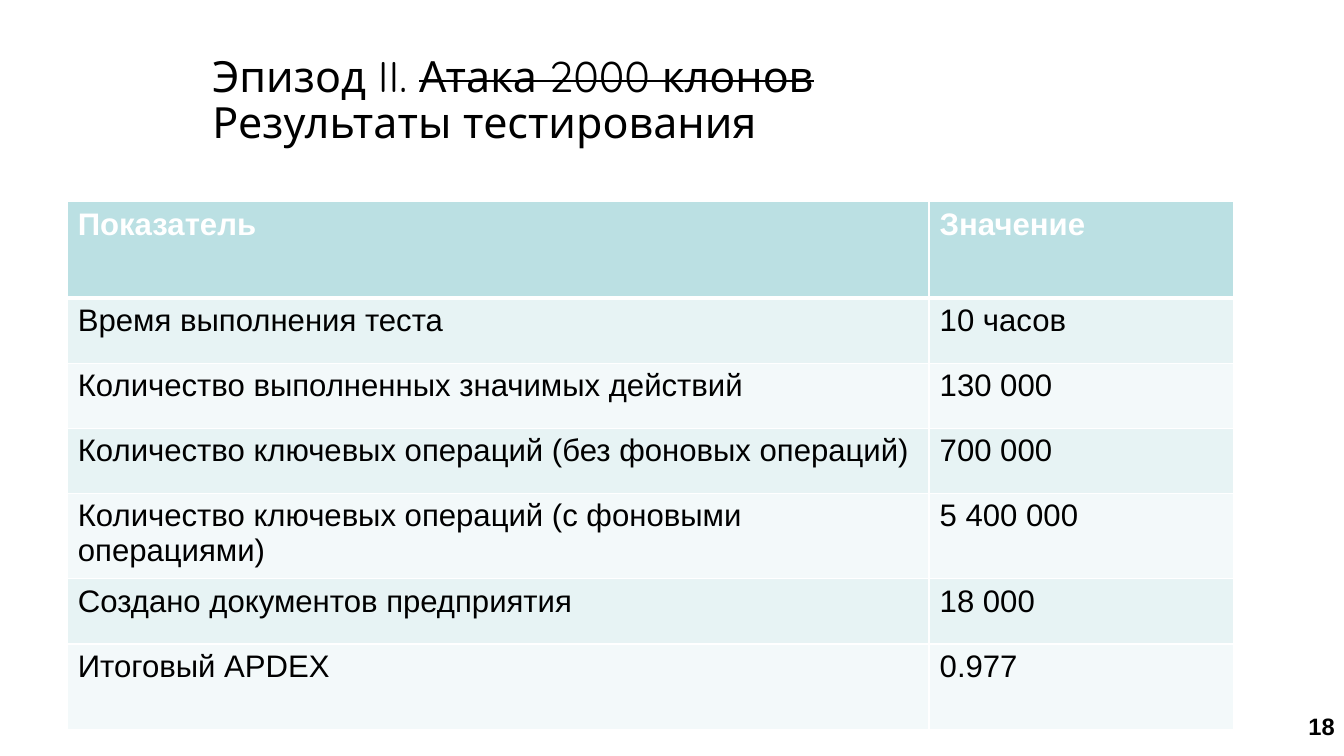
import pptx
import pptx.util
import pptx.dml.color
import pptx.enum.text
import pptx.oxml.ns
import lxml.etree

Cm = pptx.util.Cm
Pt = pptx.util.Pt
ALIGN = pptx.enum.text.PP_ALIGN
ANCHOR = pptx.enum.text.MSO_ANCHOR
AUTO_SIZE = pptx.enum.text.MSO_AUTO_SIZE

COLORS = {
    "text": "000000",
    "white": "FFFFFF",
    "header": "BBE0E3",
    "odd": "E7F3F4",
    "even": "F3F9FA",
}

RESULTS = [
    ("Показатель", "Значение"),
    ("Время выполнения теста", "10 часов"),
    ("Количество выполненных значимых действий", "130 000"),
    ("Количество ключевых операций (без фоновых операций)", "700 000"),
    ("Количество ключевых операций (с фоновыми операциями)", "5 400 000"),
    ("Создано документов предприятия", "18 000"),
    ("Итоговый APDEX", "0.977"),
]
COLUMN_WIDTHS = [20.52, 7.26]
ROW_HEIGHTS = [2.3, 1.55, 1.55, 1.55, 1.9, 1.55, 2.03]


def rgb(name):
    return pptx.dml.color.RGBColor.from_string(COLORS[name])


def apply(target, values):
    for name, value in values.items():
        setattr(target, name, value)


class SlideBuilder:
    title_font = {"name": "Quicksand", "size": Pt(29), "bold": False}
    cell_font = {"name": "Arial", "size": Pt(21), "bold": False}
    header_font = {"name": "Arial", "size": Pt(21), "bold": True}
    number_font = {"name": "Arial", "size": Pt(16), "bold": True}

    def __init__(self, slide):
        self.slide = slide

    def add_run(self, paragraph, text, font, color="text", strike=False):
        run = paragraph.add_run()
        run.text = text
        apply(run.font, font)
        run.font.color.rgb = rgb(color)
        if strike:
            run._r.get_or_add_rPr().set("strike", "sngStrike")

    def place_title(self, left, top, width, height, lines):
        title = self.slide.shapes.title
        apply(title, {"left": Cm(left), "top": Cm(top),
                      "width": Cm(width), "height": Cm(height)})
        apply(title.text_frame, {"word_wrap": True, "auto_size": AUTO_SIZE.NONE,
                                 "vertical_anchor": ANCHOR.MIDDLE})
        paragraph = title.text_frame.paragraphs[0]
        apply(paragraph, {"alignment": ALIGN.LEFT, "line_spacing": 0.9})
        for index, line in enumerate(lines):
            if index:
                paragraph.add_line_break()
            for text, strike in line:
                self.add_run(paragraph, text, self.title_font, strike=strike)

    def add_number(self, left, top, width, height, text):
        box = self.slide.shapes.add_textbox(Cm(left), Cm(top), Cm(width), Cm(height))
        box.text_frame.word_wrap = True
        paragraph = box.text_frame.paragraphs[0]
        apply(paragraph, {"alignment": ALIGN.RIGHT, "line_spacing": 1.1})
        self.add_run(paragraph, text, self.number_font)

    def add_borders(self, cell, widths):
        properties = cell._tc.get_or_add_tcPr()
        qn = pptx.oxml.ns.qn
        for side, width in widths.items():
            line = lxml.etree.SubElement(properties, qn("a:ln" + side), w=str(Pt(width)))
            fill = lxml.etree.SubElement(line, qn("a:solidFill"))
            lxml.etree.SubElement(fill, qn("a:srgbClr"), val=COLORS["white"])

    def add_table(self, left, top, widths, heights, rows):
        frame = self.slide.shapes.add_table(
            len(rows), len(widths), Cm(left), Cm(top), Cm(sum(widths)), Cm(sum(heights)))
        table = frame.table
        for column, width in zip(table.columns, widths):
            column.width = Cm(width)
        for row, height in zip(table.rows, heights):
            row.height = Cm(height)
        for row_index, values in enumerate(rows):
            is_header = row_index == 0
            fill = "header" if is_header else "odd" if row_index % 2 else "even"
            font = self.header_font if is_header else self.cell_font
            borders = {"L": 1, "R": 1, "T": 3 if row_index == 1 else 1,
                       "B": 3 if is_header else 1}
            for column_index, text in enumerate(values):
                cell = table.cell(row_index, column_index)
                self.add_borders(cell, borders)
                cell.fill.solid()
                cell.fill.fore_color.rgb = rgb(fill)
                self.add_run(cell.text_frame.paragraphs[0], text, font,
                             "white" if is_header else "text")


def main():
    presentation = pptx.Presentation()
    apply(presentation, {"slide_width": Cm(32), "slide_height": Cm(18)})
    slide = presentation.slides.add_slide(presentation.slide_layouts[5])
    slide.background.fill.solid()
    slide.background.fill.fore_color.rgb = rgb("white")
    builder = SlideBuilder(slide)
    builder.add_number(29.46, 16.76, 2.57, 1, "18")
    builder.place_title(4.8, 1, 15.2, 2.85, [
        [("Эпизод II. ", False), ("Атака 2000 клонов", True)],
        [("Результаты тестирования", False)],
    ])
    builder.add_table(1.6, 4.8, COLUMN_WIDTHS, ROW_HEIGHTS, RESULTS)
    presentation.save("out.pptx")


if __name__ == "__main__":
    main()
